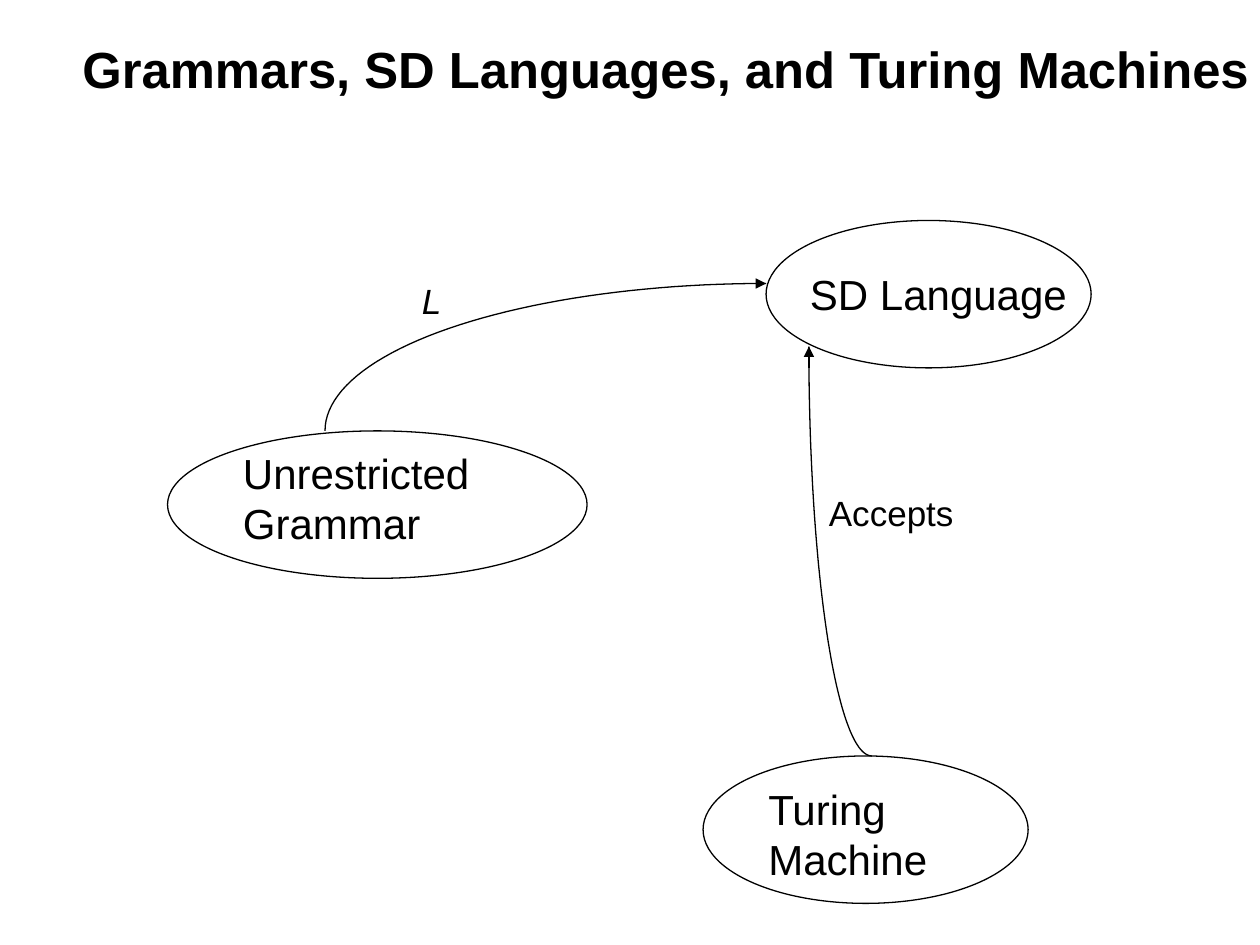
from math import cos, radians, sin

from lxml.etree import SubElement
from pptx import Presentation
from pptx.dml.color import RGBColor
from pptx.enum.shapes import MSO_CONNECTOR, MSO_SHAPE
from pptx.enum.text import MSO_ANCHOR, MSO_AUTO_SIZE, PP_ALIGN
from pptx.oxml.ns import qn
from pptx.util import Inches, Pt

INK = "000000"
FONT = "Arial"


def color(value):
    return RGBColor.from_string(value)


def set_line(shape):
    shape.line.color.rgb = color(INK)
    shape.line.width = Pt(0.75)


def place(shape, left, top, width, height):
    shape.left, shape.top = Inches(left), Inches(top)
    shape.width, shape.height = Inches(width), Inches(height)


def write(para, text, size, bold=False, italic=False):
    span = para.add_run()
    span.text = text
    span.font.name = FONT
    span.font.size = Pt(size)
    span.font.bold = bold
    span.font.italic = italic
    span.font.color.rgb = color(INK)


def add_title(page, text):
    title = page.shapes.title
    place(title, 0.5, 0.08, 9.58, 0.92)
    frame = title.text_frame
    frame.auto_size = MSO_AUTO_SIZE.NONE
    frame.word_wrap = True
    frame.vertical_anchor = MSO_ANCHOR.MIDDLE
    frame.paragraphs[0].alignment = PP_ALIGN.CENTER
    write(frame.paragraphs[0], text, 29, bold=True)


def add_label(page, text, bounds, size, italic=False, wrap=True):
    box = page.shapes.add_textbox(*map(Inches, bounds))
    box.text_frame.word_wrap = wrap
    write(box.text_frame.paragraphs[0], text, size, italic=italic)


def add_ellipse(page, left, top, width):
    ellipse = page.shapes.add_shape(
        MSO_SHAPE.OVAL, Inches(left), Inches(top), Inches(width), Inches(1.17))
    ellipse.shadow.inherit = False
    ellipse.fill.background()
    set_line(ellipse)


def add_quarter_arc(page, center, radii, start, end, steps=45):
    points = []
    for step in range(steps + 1):
        angle = radians(start + (end - start) * step / steps)
        points.append((Inches(center[0] + radii[0] * cos(angle)),
                       Inches(center[1] + radii[1] * sin(angle))))
    builder = page.shapes.build_freeform(*points[0])
    builder.add_line_segments(points[1:], close=False)
    arc = builder.convert_to_shape()
    arc.shadow.inherit = False
    arc.fill.background()
    set_line(arc)


def add_arrow(page, start, end):
    arrow = page.shapes.add_connector(
        MSO_CONNECTOR.STRAIGHT, *map(Inches, start + end))
    set_line(arrow)
    SubElement(arrow.line._get_or_add_ln(), qn("a:tailEnd"), type="triangle")
    SubElement(arrow._element.spPr, qn("a:effectLst"))


def main():
    deck = Presentation()
    deck.slide_width, deck.slide_height = Inches(10), Inches(7.5)
    page = deck.slides.add_slide(deck.slide_layouts[5])
    add_title(page, "Grammars, SD Languages, and Turing Machines ")

    add_label(page, "SD Language", (6.33, 2.08, 2.75, 0.5), 24)
    add_label(page, "Unrestricted Grammar", (1.83, 3.5, 3.17, 0.9), 24)
    add_label(page, "Turing Machine", (6, 6.17, 2.3, 0.9), 24)

    add_ellipse(page, 6.08, 1.75, 2.58)
    add_ellipse(page, 5.58, 6, 2.58)
    add_ellipse(page, 1.33, 3.42, 3.33)

    add_quarter_arc(page, (6.08, 3.42), (3.5, 1.17), 270, 180)
    add_arrow(page, (5.92, 2.25), (6.08, 2.25))
    add_quarter_arc(page, (6.92, 2.75), (0.5, 3.25), 90, 180)
    add_arrow(page, (6.42, 2.92), (6.42, 2.75))

    add_label(page, "L", (3.25, 2.17, 0.58, 0.43), 20, italic=True)
    add_label(page, "Accepts", (6.48, 3.85, 1.19, 0.43), 20, wrap=False)
    deck.save("out.pptx")


if __name__ == "__main__":
    main()
